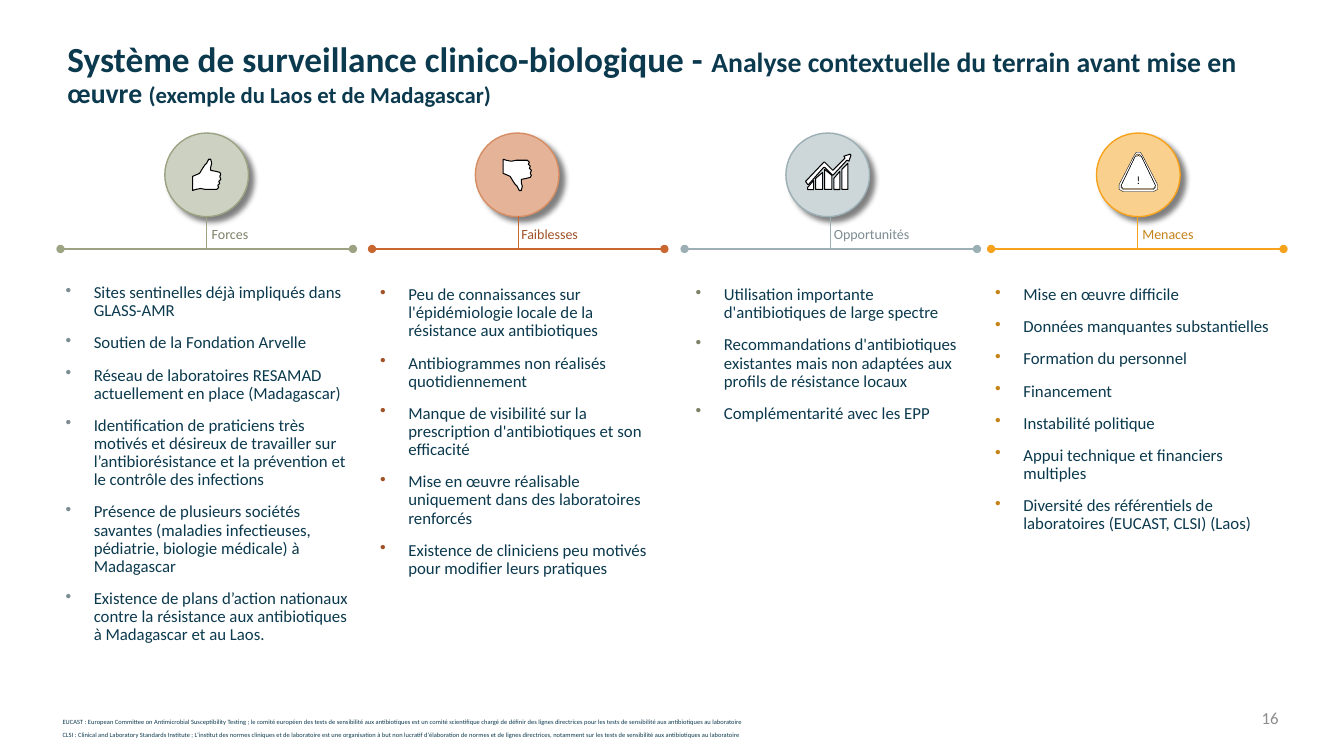
from lxml import etree
from pptx import Presentation
from pptx import util as u
from pptx.dml.color import RGBColor
from pptx.enum import shapes, text
from pptx.oxml import ns

FONT = "Calibri"
NAVY = RGBColor(0x0B, 0x39, 0x4D)
GREY = RGBColor(0x8C, 0x8C, 0x8C)
BLACK = RGBColor(0, 0, 0)
WHITE = RGBColor(255, 255, 255)
SAGE, SAGE_PALE, SAGE_DARK = (RGBColor.from_string(c) for c in ("9CA383", "CDD1C1", "7D8269"))
RUST, RUST_MID, RUST_PALE, RUST_DARK = (
    RGBColor.from_string(c) for c in ("C96731", "D78D64", "E4B398", "A15227"))
STEEL, STEEL_PALE, STEEL_DARK = (RGBColor.from_string(c) for c in ("9BAFB5", "CDD7DA", "7C8C91"))
GOLD, GOLD_PALE, GOLD_DARK = (RGBColor.from_string(c) for c in ("F6A21D", "FAD08E", "C58217"))

# Grid, in inches: four columns, and the rows of each column
LEFT, PITCH, COL_W = 0.6, 3.08, 2.9
ROW_BADGE, ROW_STEM, ROW_LABEL, ROW_RULE, ROW_LIST = 1.32, 2.14, 2.19, 2.47, 2.79
BADGE = 0.83
INSET = 0.05

# Icon outlines, in hundredths of an inch
THUMB = [(17, 0), (18, 0), (19, 4), (18, 8), (18, 11), (23, 12), (27, 13), (28, 15), (27, 17),
         (28, 20), (26, 22), (27, 24), (25, 26), (26, 28), (24, 30), (13, 30), (8, 29), (3, 30),
         (0, 31), (0, 17), (7, 14), (10, 9), (12, 6), (14, 4), (16, 0)]
ARROW = [(44, 0), (38, 2), (39, 4), (27, 16), (19, 8), (18, 8), (0, 27), (2, 30), (3, 30),
         (18, 13), (19, 13), (27, 21), (28, 20), (41, 6), (43, 7), (45, 1)]
BAR_TOPS = [(33, 26), (24, 18), (15, 21), (24, 17), (15, 9)]


def style(obj, **fmt):
    for name, value in fmt.items():
        setattr(obj, name, value)


def effects(sp, shadow=False):
    lst = etree.SubElement(sp._element.spPr, ns.qn("a:effectLst"))
    if shadow:
        sh = etree.SubElement(lst, ns.qn("a:outerShdw"), blurRad=str(u.Pt(4)), dist=str(u.Pt(5)),
                              dir="2700000", algn="tl", rotWithShape="0")
        clr = etree.SubElement(sh, ns.qn("a:srgbClr"), val=str(BLACK))
        etree.SubElement(clr, ns.qn("a:alpha"), val="50000")


def paint(sp, fill, line, width):
    sp.fill.solid()
    sp.fill.fore_color.rgb = fill
    sp.line.color.rgb = line
    sp.line.width = u.Pt(width)


def add_run(p, words, size, color, bold=None):
    r = p.add_run()
    r.text = words
    style(r.font, name=FONT, size=u.Pt(size), bold=bold)
    r.font.color.rgb = color
    return r


def text_box(s, box, inset=INSET, grow=True, **fmt):
    tf = s.shapes.add_textbox(*map(u.Inches, box)).text_frame
    fit = text.MSO_AUTO_SIZE
    style(tf, **{"word_wrap": True,
                 "auto_size": fit.SHAPE_TO_FIT_TEXT if grow else fit.NONE, **fmt})
    for side in ("left", "top", "right", "bottom"):
        setattr(tf, f"margin_{side}", u.Inches(inset))
    return tf


def paragraphs(tf, items):
    for i, item in enumerate(items):
        yield (tf.add_paragraph() if i else tf.paragraphs[0]), item


def bullet_list(s, x, y, items, color):
    tf = text_box(s, (x, y, COL_W + 0.01, 2.5))
    for i, (p, item) in enumerate(paragraphs(tf, items)):
        style(p, line_spacing=0.9, space_before=u.Pt(10 if i else 0))
        pPr = p._p.get_or_add_pPr()
        pPr.set("marL", str(u.Inches(0.28)))
        pPr.set("indent", str(u.Inches(-0.28)))
        clr = etree.SubElement(pPr, ns.qn("a:buClr"))
        etree.SubElement(clr, ns.qn("a:srgbClr"), val=str(color))
        etree.SubElement(pPr, ns.qn("a:buChar"), char="•")
        add_run(p, item, 12, NAVY)


def line(s, x1, y1, x2, y2, color, dots=False):
    c = s.shapes.add_connector(shapes.MSO_CONNECTOR.STRAIGHT, *map(u.Inches, (x1, y1, x2, y2)))
    c.line.color.rgb = color
    c.line.width = u.Pt(1)
    if dots:
        for end in ("a:headEnd", "a:tailEnd"):
            etree.SubElement(c.line._get_or_add_ln(), ns.qn(end), type="oval")
    effects(c)


def outline(s, x, y, *contours, width=0.75):
    first, *rest = contours
    fb = s.shapes.build_freeform(*first[0], scale=u.Inches(0.01))
    fb.add_line_segments(first[1:], close=True)
    for pts in rest:
        fb.move_to(*pts[0])
        fb.add_line_segments(pts[1:], close=True)
    sp = fb.convert_to_shape(u.Inches(x), u.Inches(y))
    paint(sp, WHITE, BLACK, width)
    sp.shadow.inherit = False
    return sp


# Icons, each placed from the middle of its badge
def thumb_up(s, cx):
    outline(s, cx - 0.14, 1.58, THUMB)


def thumb_down(s, cx):
    outline(s, cx - 0.14, 1.58, [(x, 31 - y) for x, y in THUMB])


def growth_chart(s, cx):
    outline(s, cx - 0.22, 1.53, ARROW)
    for i, (left_top, right_top) in enumerate(BAR_TOPS):
        x = 2 + 8.5 * i
        outline(s, cx - 0.22, 1.53, [(x, left_top), (x + 6.5, right_top), (x + 6.5, 35), (x, 35)])


def warning_sign(s, cx):
    rings = []
    for d in (0, 2, 3):
        right = [(2 - d / 3, d + 0.5), (4 - d / 2, 3 + d / 3), (19 - d * 0.8, 32 + d / 3),
                 (18.5 - d * 0.8, 37 - d * 0.8), (15, 39 - d)]
        rings.append([(19, d)] + [(19 + x, y) for x, y in right]
                     + [(19 - x, y) for x, y in reversed(right)])
    sp = outline(s, cx - 0.19, 1.51, *rings, width=0.25)
    tf = sp.text_frame
    m = u.Inches(INSET)
    style(tf, vertical_anchor=text.MSO_ANCHOR.BOTTOM, margin_left=m, margin_right=m,
          margin_top=m, margin_bottom=m)
    tf.paragraphs[0].alignment = text.PP_ALIGN.CENTER
    add_run(tf.paragraphs[0], "!", 8, BLACK)


# name, icon, rule, badge edge, badge fill, label, bullet, label width, nudges (rule, label, list)
COLUMNS = [
    ("Forces", thumb_up, SAGE, SAGE, SAGE_PALE, SAGE_DARK, STEEL_DARK, 0.48, (0, 0, 0), [
        "Sites sentinelles déjà impliqués dans GLASS-AMR",
        "Soutien de la Fondation Arvelle",
        "Réseau de laboratoires RESAMAD actuellement en place (Madagascar)",
        "Identification de praticiens très motivés et désireux de travailler sur l’antibiorésistance et la prévention et le contrôle des infections",
        "Présence de plusieurs sociétés savantes (maladies infectieuses, pédiatrie, biologie médicale) à Madagascar",
        "Existence de plans d’action nationaux contre la résistance aux antibiotiques à Madagascar et au Laos."]),
    ("Faiblesses", thumb_down, RUST, RUST_MID, RUST_PALE, RUST_DARK, RUST_DARK, 0.68, (0.01, -0.01, 0.04), [
        "Peu de connaissances sur l'épidémiologie locale de la résistance aux antibiotiques",
        "Antibiogrammes non réalisés quotidiennement",
        "Manque de visibilité sur la prescription d'antibiotiques et son efficacité",
        "Mise en œuvre réalisable uniquement dans des laboratoires renforcés",
        "Existence de cliniciens peu motivés pour modifier leurs pratiques"]),
    ("Opportunités", growth_chart, STEEL, STEEL, STEEL_PALE, STEEL_DARK, SAGE_DARK, 0.87, (0.03, 0.01, 0.09), [
        "Utilisation importante d'antibiotiques de large spectre",
        "Recommandations d'antibiotiques existantes mais non adaptées aux profils de résistance locaux",
        "Complémentarité avec les EPP"]),
    ("Menaces", warning_sign, GOLD, GOLD, GOLD_PALE, GOLD_DARK, GOLD_DARK, 0.62, (-0.01, -0.01, -0.02), [
        "Mise en œuvre difficile", "Données manquantes substantielles", "Formation du personnel",
        "Financement", "Instabilité politique", "Appui technique et financiers multiples",
        "Diversité des référentiels de laboratoires (EUCAST, CLSI) (Laos)"]),
]
TITLE = [("Système de surveillance clinico-biologique - ", 25.2),
         ("Analyse contextuelle du terrain avant mise en œuvre ", 19.8),
         ("(exemple du Laos et de Madagascar)", 16.2)]
NOTES = [
    "EUCAST : European Committee on Antimicrobial Susceptibility Testing\u00a0; le comité européen des tests de sensibilité aux antibiotiques est un comité scientifique chargé de définir des lignes directrices pour les tests de sensibilité aux antibiotiques au laboratoire",
    "CLSI : Clinical and Laboratory Standards Institute ; L'institut des normes cliniques et de laboratoire est une organisation à but non lucratif d'élaboration de normes et de lignes directrices, notamment sur les tests de sensibilité aux antibiotiques au laboratoire"]


def swot_column(s, i, name, icon, rule, edge, fill, label, bullet, label_w, nudges, items):
    x = LEFT + PITCH * i
    cx = x + COL_W / 2
    to_rule, to_label, to_list = nudges
    bullet_list(s, x + to_list, ROW_LIST - (0 if i else 0.02), items, bullet)
    badge = s.shapes.add_shape(shapes.MSO_SHAPE.OVAL, *map(
        u.Inches, (cx - BADGE / 2, ROW_BADGE, BADGE, BADGE)))
    paint(badge, fill, edge, 1)
    effects(badge, shadow=True)
    icon(s, cx)
    line(s, x + to_rule, ROW_RULE, x + to_rule + COL_W, ROW_RULE, rule, dots=True)
    line(s, cx + to_rule, ROW_STEM, cx + to_rule, ROW_RULE, rule)
    tf = text_box(s, (cx + to_label, ROW_LABEL, label_w, 0.28), word_wrap=False)
    add_run(tf.paragraphs[0], name, 10, label)


def main():
    prs = Presentation()
    style(prs, slide_width=u.Inches(13.33), slide_height=u.Inches(7.5))
    s = prs.slides.add_slide(prs.slide_layouts[6])
    middle = text.MSO_ANCHOR.MIDDLE

    # Title
    p = text_box(s, (0.57, 0.4, 12.22, 0.7), 0.1, False, vertical_anchor=middle).paragraphs[0]
    p.line_spacing = 0.9
    for words, size in TITLE:
        add_run(p, words, size, NAVY, True)

    # Four columns
    for i, column in enumerate(COLUMNS):
        swot_column(s, i, *column)

    # Footnotes and page number
    tf = text_box(s, (0.57, 7.1, 7.92, 0.28), vertical_anchor=middle)
    for p, note in paragraphs(tf, NOTES):
        add_run(p, note, 8, NAVY).font._element.set("baseline", "29000")
    p = text_box(s, (9.78, 6.92, 3, 0.4), 0.1, False, vertical_anchor=middle).paragraphs[0]
    p.alignment = text.PP_ALIGN.RIGHT
    add_run(p, "16", 12, GREY)
    prs.save("out.pptx")


if __name__ == "__main__":
    main()
